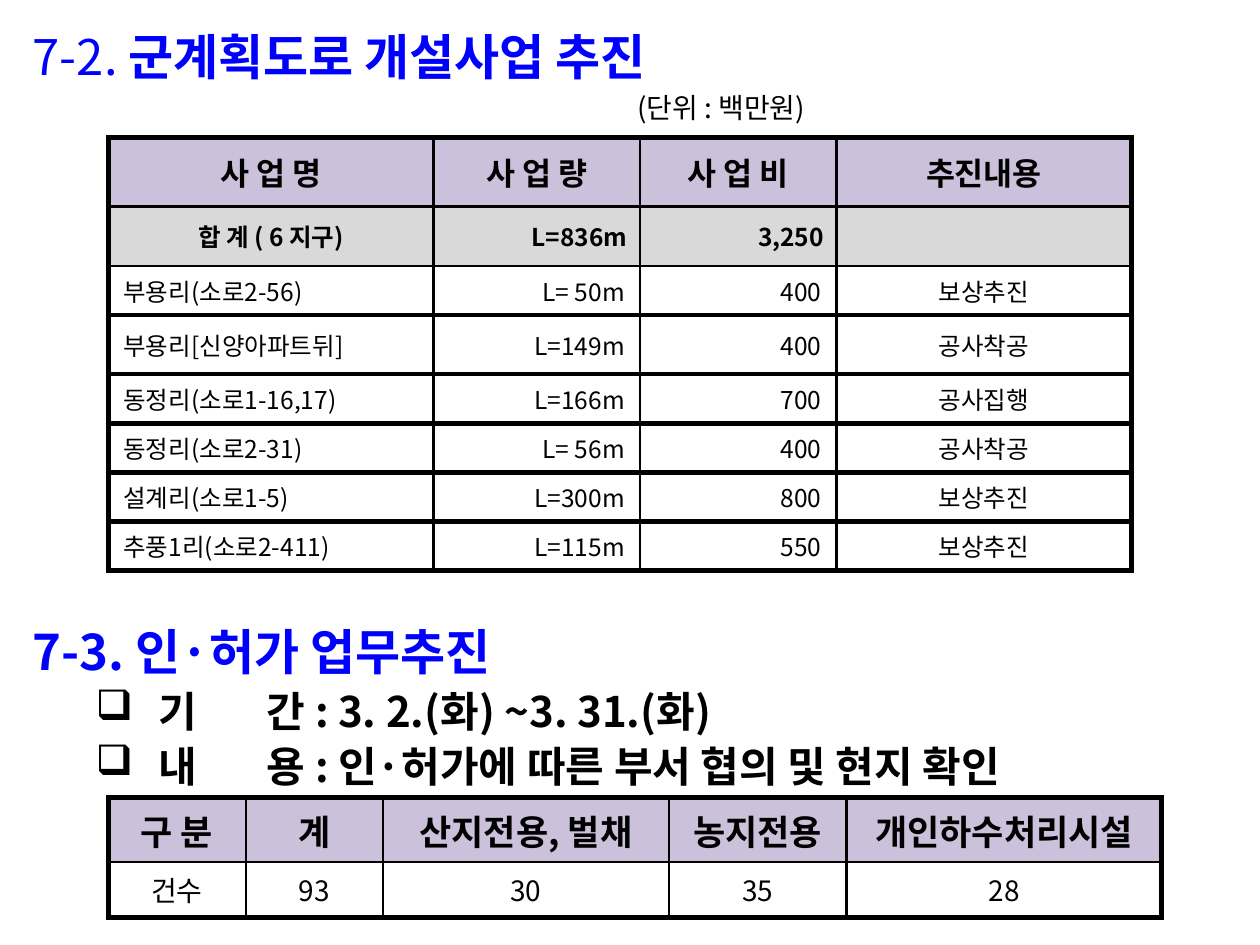
from lxml.etree import SubElement
from pptx import Presentation
from pptx.dml.color import RGBColor
from pptx.enum.text import MSO_ANCHOR, MSO_AUTO_SIZE, PP_ALIGN
from pptx.oxml.ns import qn
from pptx.util import Inches, Pt

COLORS = {"heading": "0000FF", "text": "000000", "line": "000000",
          "header": "CCC1DA", "total": "D9D9D9", "body": "FFFFFF"}
FONT = "Noto Sans CJK KR"
THICK, THIN = Pt(3), Pt(1.41)
LEFT, CENTER, RIGHT = PP_ALIGN.LEFT, PP_ALIGN.CENTER, PP_ALIGN.RIGHT


def format_run(run, size, color, bold):
    run.font.size = Pt(size)
    run.font.bold = bold
    run.font.name = FONT
    run.font.color.rgb = RGBColor.from_string(COLORS[color])
    SubElement(run._r.get_or_add_rPr(), qn("a:ea"), typeface=FONT)


def add_border(cell, side, line_width):
    line = SubElement(cell._tc.get_or_add_tcPr(), qn(f"a:{side}"), w=str(line_width))
    fill = SubElement(line, qn("a:solidFill"))
    SubElement(fill, qn("a:srgbClr"), val=COLORS["line"])


presentation = Presentation()
presentation.slide_width, presentation.slide_height = Inches(10), Inches(7.5)
column_unit = presentation.slide_width / 100
row_unit = presentation.slide_height / 100
slide = presentation.slides.add_slide(presentation.slide_layouts[5])

title = slide.shapes.title
title.left, title.top = int(1.6 * column_unit), int(2.13 * row_unit)
title.width, title.height = int(95.3 * column_unit), int(12 * row_unit)
title_frame = title.text_frame
title_frame.auto_size = MSO_AUTO_SIZE.NONE
title_frame.vertical_anchor = MSO_ANCHOR.TOP
heading = title_frame.paragraphs[0]
heading.alignment = LEFT
for text, bold in (("7-2. ", False), ("군계획도로 개설사업 추진", True)):
    run = heading.add_run()
    run.text = text
    format_run(run, 28, "heading", bold)
unit_note = title_frame.add_paragraph()
unit_note.text = "(단위 : 백만원)"
unit_note.alignment = LEFT
unit_note.space_before = Pt(3)
unit_note._p.get_or_add_pPr().set("marL", str(int(48 * column_unit)))
format_run(unit_note.runs[0], 16, "text", False)

permit_box = slide.shapes.add_textbox(int(1.6 * column_unit), int(64.5 * row_unit),
                                      int(96.1 * column_unit), int(20.9 * row_unit))
permit_frame = permit_box.text_frame
permit_frame.word_wrap = False
permit_frame.text = "7-3. 인·허가 업무추진\n기\t간 : 3. 2.(화) ~3. 31.(화)\n내\t용 : 인·허가에 따른 부서 협의 및 현지 확인"
for index, paragraph in enumerate(permit_frame.paragraphs):
    paragraph.line_spacing = 1.1
    if index:
        properties = paragraph._p.get_or_add_pPr()
        properties.set("marL", str(int(10 * column_unit)))
        properties.set("indent", str(int(-5 * column_unit)))
        bullet_color = SubElement(properties, qn("a:buClr"))
        SubElement(bullet_color, qn("a:srgbClr"), val=COLORS["text"])
        SubElement(properties, qn("a:buChar"), char="❑")
        tabs = SubElement(properties, qn("a:tabLst"))
        SubElement(tabs, qn("a:tab"), pos=str(int(18.6 * column_unit)), algn="l")
    for run in paragraph.runs:
        format_run(run, 24 if index else 28, "text" if index else "heading", True)

HEADER, TOTAL = ("header", True, 0.1), ("total", True, 0.1)
BODY, COUNT = ("body", False, 0.12), ("body", False, 0.1)
tables = [
    dict(top=14.53, columns=[25.8, 16.4, 15.6, 23.4],
         heights=[7.33, 6.27, 5.2, 6.27] + [5.2] * 4,
         sizes=[18] + [14] * 7, styles=[HEADER, TOTAL] + [BODY] * 6,
         alignments=[[CENTER] * 4, [CENTER, RIGHT, RIGHT, CENTER]] + [[LEFT, RIGHT, RIGHT, CENTER]] * 6,
         thick_from=3,
         rows=[["사 업 명", "사 업 량", "사 업 비", "추진내용"],
               ["합 계 ( 6 지구)", "L=836m", "3,250", ""],
               ["부용리(소로2-56)", "L= 50m", "400", "보상추진"],
               ["부용리[신양아파트뒤]", "L=149m", "400", "공사착공"],
               ["동정리(소로1-16,17)", "L=166m", "700", "공사집행"],
               ["동정리(소로2-31)", "L= 56m", "400", "공사착공"],
               ["설계리(소로1-5)", "L=300m", "800", "보상추진"],
               ["추풍1리(소로2-411)", "L=115m", "550", "보상추진"]]),
    dict(top=84.4, columns=[10.9, 10.9, 22.7, 14.1, 25], heights=[6.8, 5.87],
         sizes=[20, 16], styles=[HEADER, COUNT], alignments=[[CENTER] * 5] * 2,
         thick_from=2,
         rows=[["구 분", "계", "산지전용, 벌채", "농지전용", "개인하수처리시설"],
               ["건수", "93", "30", "35", "28"]]),
]

for data in tables:
    columns, heights = data["columns"], data["heights"]
    table = slide.shapes.add_table(
        len(heights), len(columns), int(8.6 * column_unit), int(data["top"] * row_unit),
        int(sum(columns) * column_unit), int(sum(heights) * row_unit)).table
    for column, share in zip(table.columns, columns):
        column.width = int(share * column_unit)
    for row_index, values in enumerate(data["rows"]):
        table.rows[row_index].height = int(heights[row_index] * row_unit)
        fill, bold, margin = data["styles"][row_index]
        for column_index, value in enumerate(values):
            cell = table.cell(row_index, column_index)
            cell.text = value
            cell.vertical_anchor = MSO_ANCHOR.MIDDLE
            cell.margin_left = cell.margin_right = Inches(margin)
            paragraph = cell.text_frame.paragraphs[0]
            paragraph.alignment = data["alignments"][row_index][column_index]
            for run in paragraph.runs:
                format_run(run, data["sizes"][row_index], "text", bold)
            for side, edge in (("lnL", column_index), ("lnR", column_index + 1)):
                add_border(cell, side, THICK if edge in (0, len(columns)) else THIN)
            for side, edge in (("lnT", row_index), ("lnB", row_index + 1)):
                add_border(cell, side, THICK if edge == 0 or edge >= data["thick_from"] else THIN)
            cell.fill.solid()
            cell.fill.fore_color.rgb = RGBColor.from_string(COLORS[fill])

presentation.save("out.pptx")
